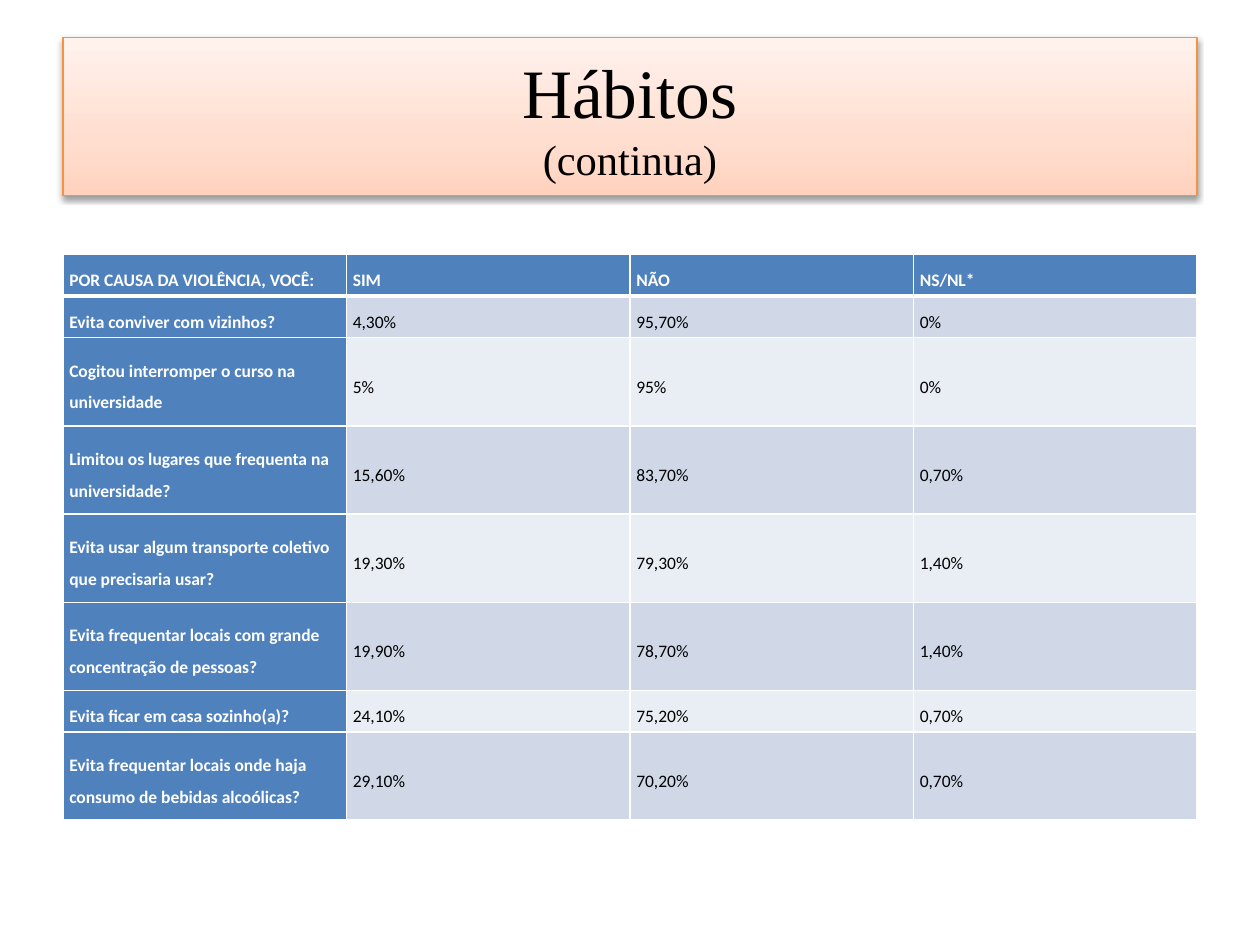
"""Build the slide "Hábitos": a title banner above a table of answers about violence."""
from copy import deepcopy

from lxml.etree import SubElement
from pptx import Presentation
from pptx.dml.color import RGBColor
from pptx.enum.text import MSO_ANCHOR, MSO_AUTO_SIZE, PP_ALIGN
from pptx.oxml import parse_xml
from pptx.oxml.ns import nsdecls, qn
from pptx.util import Inches, Pt

TITLE = ("Hábitos", "(continua)")
HEADER = ("POR CAUSA DA VIOLÊNCIA, VOCÊ:", "SIM", "NÃO", "NS/NL*")
ANSWERS = [
    ("Evita conviver com vizinhos?", "4,30%", "95,70%", "0%"),
    ("Cogitou interromper o curso na universidade", "5%", "95%", "0%"),
    ("Limitou os lugares que frequenta na universidade?", "15,60%", "83,70%", "0,70%"),
    ("Evita usar algum transporte coletivo que precisaria usar?", "19,30%", "79,30%", "1,40%"),
    ("Evita frequentar locais com grande concentração de pessoas?", "19,90%", "78,70%", "1,40%"),
    ("Evita ficar em casa sozinho(a)?", "24,10%", "75,20%", "0,70%"),
    ("Evita frequentar locais onde haja consumo de bebidas alcoólicas?", "29,10%", "70,20%", "0,70%"),
]
THEME = {
    "title_font": "Times New Roman", "title_sizes": (39.6, 24.3),
    "table_font": "Calibri", "table_size": 10,
    "dark_text": "000000", "light_text": "FFFFFF",
    "heading": "4F81BD", "bands": ("E9EDF4", "D0D8E8"), "grid": "FFFFFF",
    "banner": ((0, "FFD2BD"), (0.35, "FFDED0"), (1, "FFF2ED")), "banner_line": "F69240",
}
LEFT, WIDTH = 0.5, 9
BANNER_TOP, BANNER_HEIGHT = 0.3, 1.25
TABLE_TOP, ONE_LINE, TWO_LINES = 2.02, 0.33, 0.7
ONE_LINE_CHARS = 32


def style_font(run, name, size, color, bold=False):
    """Set the typeface of a run."""
    run.font.name, run.font.size, run.font.bold = name, Pt(size), bold
    run.font.color.rgb = RGBColor.from_string(color)


def add_shadow(shape):
    """Give a shape a soft shadow below it."""
    shape.shadow.inherit = False
    effects = shape._element.spPr.find(qn("a:effectLst"))
    shadow = SubElement(effects, qn("a:outerShdw"), blurRad=str(Pt(3.1)), dist=str(Pt(1.6)),
                        dir="5400000", rotWithShape="0")
    color = SubElement(shadow, qn("a:srgbClr"), val=THEME["dark_text"])
    SubElement(color, qn("a:alpha"), val="38000")


def fill_banner(banner):
    """Fill the banner with its three-stop gradient."""
    banner.fill.gradient()
    stops = banner._element.spPr.find(qn("a:gradFill")).find(qn("a:gsLst"))
    stops.append(deepcopy(stops[0]))
    for stop, (position, color) in zip(banner.fill.gradient_stops, THEME["banner"]):
        stop.position = position
        stop.color.rgb = RGBColor.from_string(color)
    banner.fill.gradient_angle = 90


def add_banner(slide):
    """Place and format the title."""
    banner = slide.shapes.title
    banner.left, banner.top = Inches(LEFT), Inches(BANNER_TOP)
    banner.width, banner.height = Inches(WIDTH), Inches(BANNER_HEIGHT)
    fill_banner(banner)
    banner.line.color.rgb = RGBColor.from_string(THEME["banner_line"])
    banner.line.width = Pt(0.75)
    add_shadow(banner)
    frame = banner.text_frame
    frame.text = "\v".join(TITLE)
    frame.auto_size = MSO_AUTO_SIZE.NONE
    frame.vertical_anchor = MSO_ANCHOR.MIDDLE
    heading = frame.paragraphs[0]
    heading.alignment = PP_ALIGN.CENTER
    for run, size in zip(heading.runs, THEME["title_sizes"]):
        style_font(run, THEME["title_font"], size, THEME["dark_text"])


def set_borders(cell, **widths):
    """Draw the four borders of a cell, with widths in points."""
    properties = cell._tc.get_or_add_tcPr()
    for index, (side, width) in enumerate(widths.items()):
        properties.insert(index, parse_xml(
            f'<a:ln{side} {nsdecls("a")} w="{Pt(width)}"><a:solidFill>'
            f'<a:srgbClr val="{THEME["grid"]}"/></a:solidFill></a:ln{side}>'))


def fill_cell(cell, text, row, column):
    """Write and format one table cell."""
    is_heading = row == 0 or column == 0
    cell.text = text
    cell.vertical_anchor = MSO_ANCHOR.MIDDLE
    cell.margin_left = cell.margin_right = Inches(0.05)
    cell.margin_top = cell.margin_bottom = 0
    cell.fill.solid()
    background = THEME["heading"] if is_heading else THEME["bands"][row % 2]
    cell.fill.fore_color.rgb = RGBColor.from_string(background)
    set_borders(cell, L=1, R=1, T=3 if row == 1 else 1, B=3 if row == 0 else 1)
    paragraph = cell.text_frame.paragraphs[0]
    paragraph.line_spacing = 1.5
    color = THEME["light_text"] if is_heading else THEME["dark_text"]
    style_font(paragraph.runs[0], THEME["table_font"], THEME["table_size"], color, is_heading)


def add_answers(slide):
    """Add the table, with taller rows for the questions that wrap."""
    rows = [HEADER, *ANSWERS]
    heights = [TWO_LINES if len(row[0]) > ONE_LINE_CHARS else ONE_LINE for row in rows]
    table = slide.shapes.add_table(len(rows), len(HEADER), Inches(LEFT), Inches(TABLE_TOP),
                                   Inches(WIDTH), Inches(sum(heights))).table
    table.first_col = True
    for r, (row, height) in enumerate(zip(rows, heights)):
        table.rows[r].height = Inches(height)
        for c, text in enumerate(row):
            fill_cell(table.cell(r, c), text, r, c)


def main():
    """Build and save the presentation."""
    presentation = Presentation()
    presentation.slide_width, presentation.slide_height = Inches(10), Inches(7.5)
    slide = presentation.slides.add_slide(presentation.slide_layouts[5])
    add_banner(slide)
    add_answers(slide)
    presentation.save("out.pptx")


if __name__ == "__main__":
    main()
